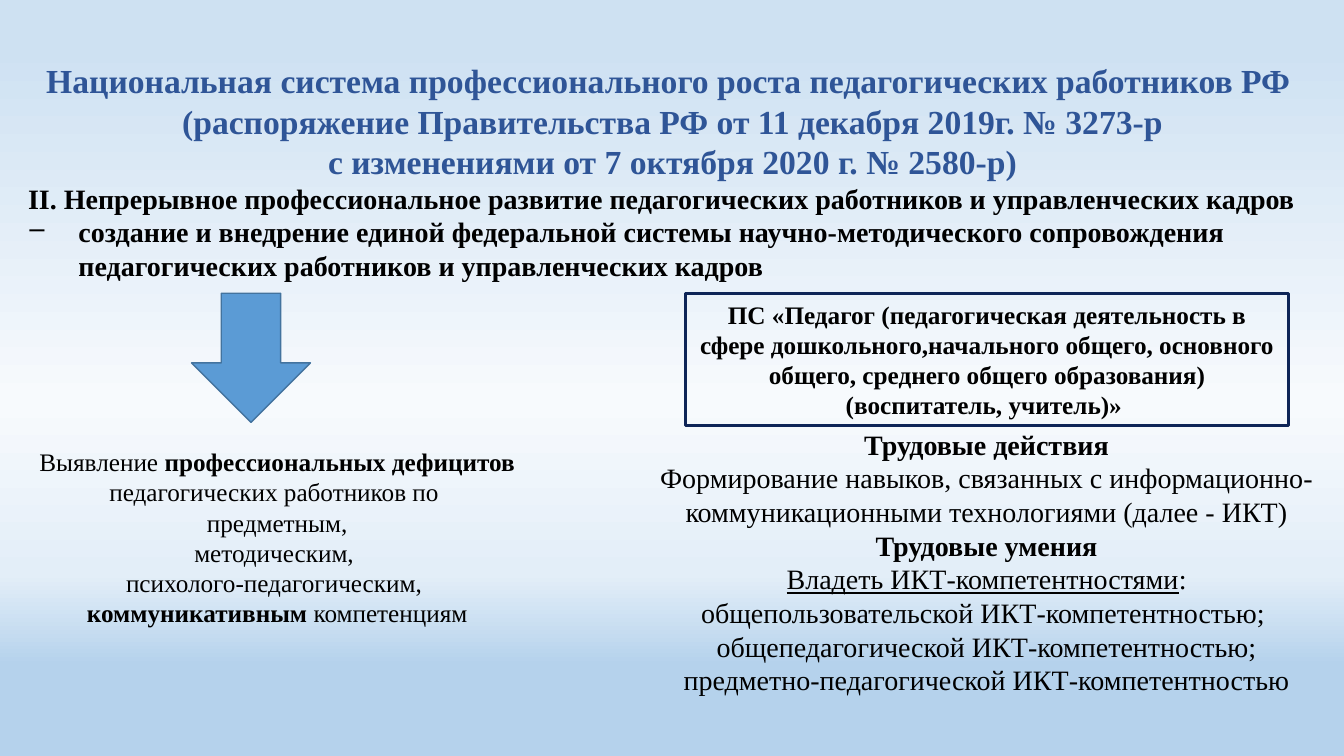
from dataclasses import dataclass
from lxml import etree
from pptx import Presentation
from pptx.dml.color import RGBColor
from pptx.enum.shapes import MSO_SHAPE
from pptx.enum.text import MSO_ANCHOR, PP_ALIGN
from pptx.oxml.ns import qn
from pptx.util import Inches, Pt

RECT, DOWN = MSO_SHAPE.RECTANGLE, MSO_SHAPE.DOWN_ARROW
MID, TOP = MSO_ANCHOR.MIDDLE, MSO_ANCHOR.TOP
LEFT, CENTER = PP_ALIGN.LEFT, PP_ALIGN.CENTER


@dataclass(frozen=True)
class Theme:
    """Colours, font and type sizes of the slide."""
    face: str = "Times New Roman"
    title: int = 24
    body: int = 20
    small: int = 18
    head: str = "2F5597"
    ink: str = "000000"
    arrow: str = "5B9BD5"
    edge: str = "43739E"
    frame: str = "0E2557"
    sky: tuple = ((6, "CEE1F2"), (53, "F7FAFD"), (76, "E3EEF8"), (88, "B5D2EC"))


class Board:
    """Draws on one slide; boxes are percent shares of its width and height."""

    def __init__(self, deck, theme):
        self.deck, self.theme = deck, theme
        self.slide = deck.slides.add_slide(deck.slide_layouts[6])

    def place(self, box):
        """Turn percent shares into lengths."""
        sides = (self.deck.slide_width, self.deck.slide_height) * 2
        return [int(side * part / 100) for side, part in zip(sides, box)]

    def sky(self):
        """Fill the background with the vertical gradient."""
        fill = self.slide.background.fill
        fill.gradient()
        fill.gradient_angle = 270
        stops = next(self.slide.element.iter(qn("a:gsLst")))
        for old in list(stops):
            stops.remove(old)
        for share, tone in self.theme.sky:
            stop = etree.SubElement(stops, qn("a:gs"), pos=str(share * 1000))
            etree.SubElement(stop, qn("a:srgbClr"), val=tone)

    def shape(self, kind, box, line, width, fill=None):
        """Add a preset shape and return its text frame."""
        item = self.slide.shapes.add_shape(kind, *self.place(box))
        item.shadow.inherit = False
        if fill:
            item.fill.solid()
            item.fill.fore_color.rgb = RGBColor.from_string(fill)
        else:
            item.fill.background()
        item.line.color.rgb = RGBColor.from_string(line)
        item.line.width = Pt(width)
        return self.wrap(item.text_frame, MID)

    def text(self, box):
        """Add a text box and return its text frame."""
        return self.wrap(self.slide.shapes.add_textbox(*self.place(box)).text_frame, TOP)

    def wrap(self, frame, anchor):
        """Let the text wrap and set its anchor."""
        frame.word_wrap = True
        frame.vertical_anchor = anchor
        return frame

    def para(self, frame, size, *runs, bold=False, tone=None, align=CENTER, mark=None, pick="bold"):
        """Add a paragraph in which every second run gets the picked style."""
        first = frame.paragraphs[0]
        para = frame.add_paragraph() if first.runs else first
        para.alignment = align
        font = para.font
        font.name, font.size, font.bold = self.theme.face, Pt(size), bold
        font.color.rgb = RGBColor.from_string(tone or self.theme.ink)
        for spot, words in enumerate(runs):
            run = para.add_run()
            run.text = words
            if spot % 2:
                setattr(run.font, pick, True)
        if mark:
            props = para._p.get_or_add_pPr()
            props.set("marL", str(Inches(0.5)))
            props.set("indent", str(-Inches(0.5)))
            sign = etree.Element(qn("a:buChar"), char=mark)
            props.insert(0, sign)


def main():
    """Build and save the slide."""
    deck = Presentation()
    deck.slide_width, deck.slide_height = Inches(13.33), Inches(7.5)
    look = Theme()
    board = Board(deck, look)
    board.sky()

    top = board.text((1.35, 7.33, 97.37, 30.93))
    for words in (
        "Национальная система профессионального роста педагогических работников РФ ",
        "(распоряжение Правительства РФ от 11 декабря 2019г. № 3273-р",
        "с изменениями от 7 октября 2020 г. № 2580-р)",
    ):
        board.para(top, look.title, words, bold=True, tone=look.head)
    board.para(top, look.body, "II. Непрерывное профессиональное развитие педагогических работников "
               "и управленческих кадров", bold=True, align=LEFT)
    board.para(top, look.body, "создание и внедрение единой федеральной системы научно-методического "
               "сопровождения педагогических работников и управленческих кадров",
               bold=True, align=LEFT, mark="‒")

    board.shape(DOWN, (14.25, 38.8, 8.85, 17.07), look.edge, 1, look.arrow)

    gaps = board.text((1.35, 58.4, 38.56, 25.6))
    for runs in (
        ("Выявление ", "профессиональных дефицитов", " педагогических работников по "),
        (" предметным, ",),
        ("методическим, ",),
        ("психолого-педагогическим, ",),
        ("", "коммуникативным", " компетенциям"),
    ):
        board.para(gaps, look.small, *runs)

    norm = board.shape(RECT, (51.01, 38.8, 44.86, 17.47), look.frame, 2.25)
    board.para(norm, look.small, "ПС «Педагог (педагогическая деятельность в сфере "
               "дошкольного,начального общего, основного общего, среднего общего образования) "
               "(воспитатель, учитель)» ", bold=True)

    skills = board.text((44.79, 55.87, 57.24, 37.2))
    for runs, bold in (
        (("Трудовые действия",), True),
        (("Формирование навыков, связанных с информационно-коммуникационными "
          "технологиями (далее - ИКТ)",), False),
        (("Трудовые умения",), True),
        (("", "Владеть ИКТ-компетентностями", ":"), False),
        (("общепользовательской ИКТ-компетентностью; ",), False),
        (("общепедагогической ИКТ-компетентностью;",), False),
        (("предметно-педагогической ИКТ-компетентностью",), False),
    ):
        board.para(skills, look.body, *runs, bold=bold, pick="underline")

    deck.save("out.pptx")


if __name__ == "__main__":
    main()
